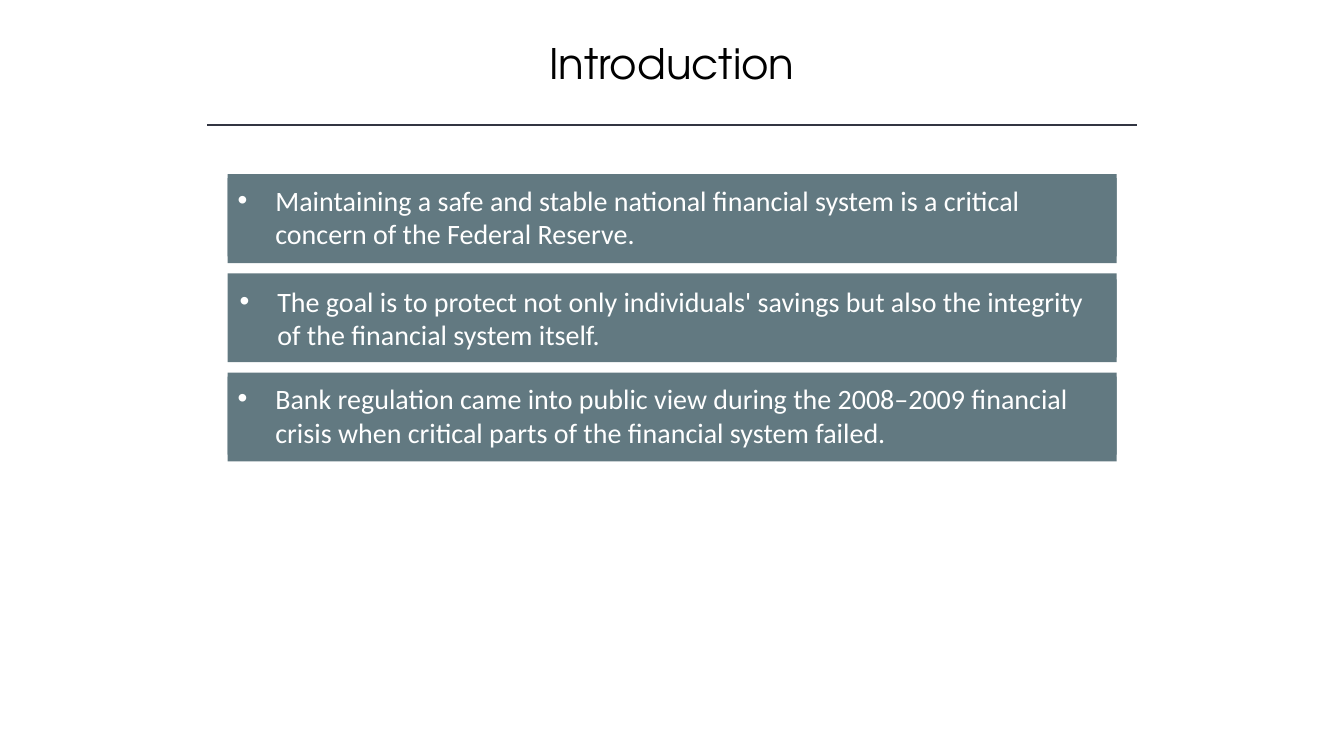
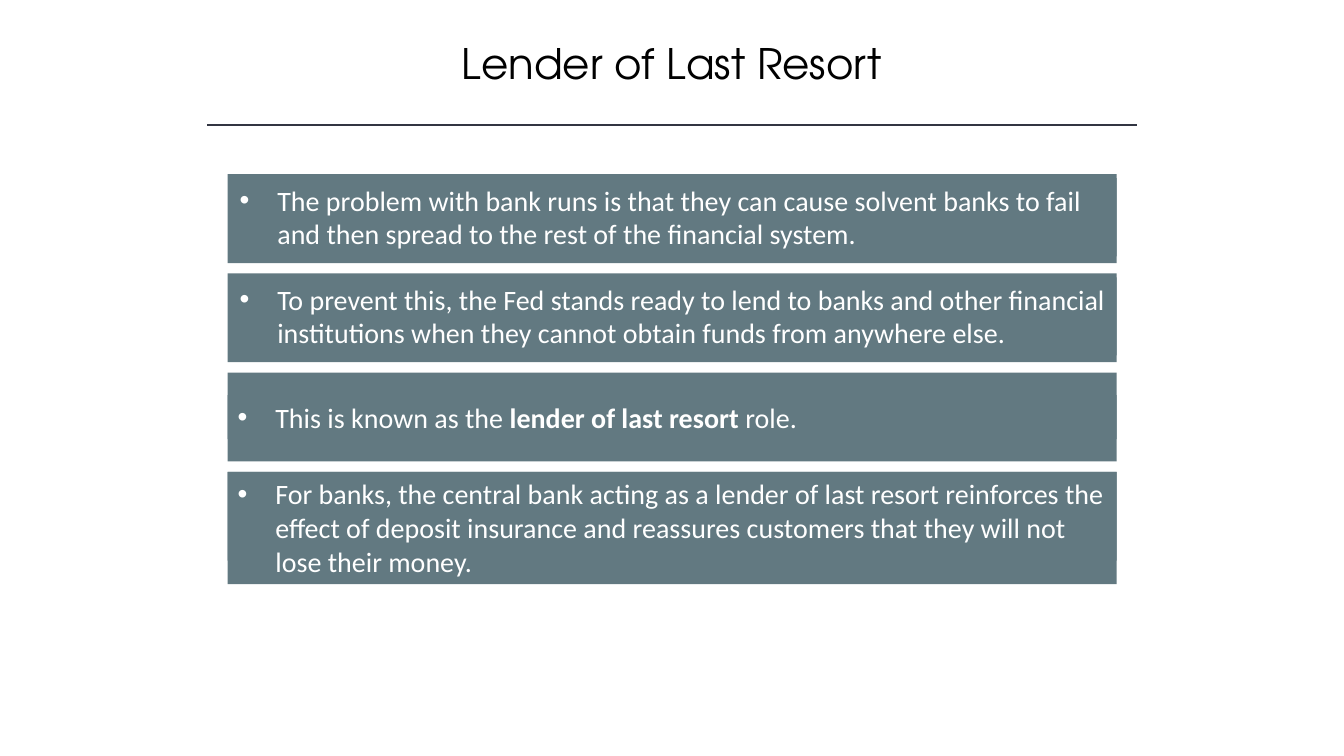
"""Build two slides on bank regulation with titled stacks of bullet cards."""
from dataclasses import dataclass

from lxml import etree
from pptx import Presentation
from pptx.dml.color import RGBColor
from pptx.enum.shapes import MSO_CONNECTOR, MSO_SHAPE
from pptx.enum.text import MSO_ANCHOR, MSO_AUTO_SIZE, PP_ALIGN
from pptx.oxml.ns import qn
from pptx.util import Cm, Pt

RECTANGLE = MSO_SHAPE.RECTANGLE
STRAIGHT = MSO_CONNECTOR.STRAIGHT
TOP = MSO_ANCHOR.TOP
FIT_SHAPE = MSO_AUTO_SIZE.SHAPE_TO_FIT_TEXT
CENTER, LEFT = PP_ALIGN.CENTER, PP_ALIGN.LEFT

COLORS = {"title": "000000", "rule": "323542", "card": "627981", "text": "FFFFFF"}
TITLE_FONT, BODY_FONT = "TeX Gyre Adventor", "Calibri"
TITLE_SIZE, BODY_SIZE = 30, 20

SLIDE_WIDTH, SLIDE_HEIGHT = 33.87, 19.05
TITLE_TOP, TITLE_WIDTH, TITLE_HEIGHT = 0.81, 25.4, 1.55
RULE_TOP, RULE_WIDTH = 3.15, 23.42
CARD_LEFT, CARD_TOP, CARD_WIDTH, CARD_HEIGHT = 5.74, 4.39, 22.4, 2.24
CARD_PITCH = 2.5
TEXT_PADDING, LINE_HEIGHT = 0.25, 0.86
BULLET_INDENT = 0.95


@dataclass(frozen=True)
class Card:
    """A bullet as text pieces, the odd ones bold, with its offset in the card."""

    pieces: tuple[str, ...]
    lines: int = 2
    shift_x: float = 0
    shift_y: float = 0.1


@dataclass(frozen=True)
class Page:
    """A slide title and its cards."""

    title: str
    cards: tuple[Card, ...]


PAGES = (
    Page("Introduction", (
        Card(("Maintaining a safe and stable national financial system is a critical "
              "concern of the Federal Reserve.",)),
        Card(("The goal is to protect not only individuals' savings but also the "
              "integrity of the financial system itself.",), shift_x=0.05, shift_y=0.15),
        Card(("Bank regulation came into public view during the 2008–2009 financial "
              "crisis when critical parts of the financial system failed.",)),
    )),
    Page("Lender of Last Resort", (
        Card(("The problem with bank runs is that they can cause solvent banks to fail "
              "and then spread to the rest of the financial system.",), shift_x=0.05),
        Card(("To prevent this, the Fed stands ready to lend to banks and other financial "
              "institutions when they cannot obtain funds from anywhere else.",),
             shift_x=0.05),
        Card(("This is known as the ", "lender of last resort ", "role."),
             lines=1, shift_y=0.57),
        Card(("For banks, the central bank acting as a lender of last resort reinforces "
              "the effect of deposit insurance and reassures customers that they will "
              "not lose their money.",), lines=3, shift_y=0),
    )),
)


def color(name: str) -> RGBColor:
    """Return a palette colour."""
    return RGBColor.from_string(COLORS[name])


def style_font(font, name: str, size: int, color_name: str) -> None:
    """Set the face, size and colour of a font."""
    font.name = name
    font.size = Pt(size)
    font.color.rgb = color(color_name)


def add_title(slide, text: str) -> None:
    """Add the centred title and the rule under it."""
    left = (SLIDE_WIDTH - TITLE_WIDTH) / 2
    box = slide.shapes.add_textbox(Cm(left), Cm(TITLE_TOP), Cm(TITLE_WIDTH), Cm(TITLE_HEIGHT))
    frame = box.text_frame
    frame.text = text
    frame.word_wrap = True
    frame.auto_size = FIT_SHAPE
    paragraph = frame.paragraphs[0]
    paragraph.alignment = CENTER
    style_font(paragraph.runs[0].font, TITLE_FONT, TITLE_SIZE, "title")

    start = (SLIDE_WIDTH - RULE_WIDTH) / 2
    rule = slide.shapes.add_connector(
        STRAIGHT, Cm(start), Cm(RULE_TOP), Cm(start + RULE_WIDTH), Cm(RULE_TOP))
    rule.line.color.rgb = color("rule")
    rule.line.width = Pt(1)
    etree.SubElement(rule.element.spPr, qn("a:effectLst"))


def add_panel(group, left: float, top: float, width: float, height: float):
    """Add a plain filled rectangle to a group."""
    shape = group.shapes.add_shape(RECTANGLE, Cm(left), Cm(top), Cm(width), Cm(height))
    shape.shadow.inherit = False
    shape.fill.solid()
    shape.fill.fore_color.rgb = color("card")
    shape.line.fill.background()
    return shape


def set_bullet(paragraph) -> None:
    """Give a paragraph a hanging round bullet."""
    properties = paragraph._p.get_or_add_pPr()
    properties.set("marL", str(Cm(BULLET_INDENT)))
    properties.set("indent", str(-Cm(BULLET_INDENT)))
    etree.SubElement(properties, qn("a:buFont"), typeface="Arial")
    etree.SubElement(properties, qn("a:buChar"), char="•")


def add_card(slide, card: Card, top: float) -> None:
    """Add a panel grouped with its bullet text."""
    group = slide.shapes.add_group_shape()
    add_panel(group, CARD_LEFT, top, CARD_WIDTH, CARD_HEIGHT)
    label = add_panel(
        group, CARD_LEFT + card.shift_x, top + card.shift_y,
        CARD_WIDTH - card.shift_x, TEXT_PADDING + card.lines * LINE_HEIGHT)
    frame = label.text_frame
    frame.word_wrap = True
    frame.auto_size = FIT_SHAPE
    frame.vertical_anchor = TOP
    paragraph = frame.paragraphs[0]
    paragraph.alignment = LEFT
    set_bullet(paragraph)
    for index, piece in enumerate(card.pieces):
        run = paragraph.add_run()
        run.text = piece
        run.font.bold = index % 2 == 1
        style_font(run.font, BODY_FONT, BODY_SIZE, "text")


def main() -> None:
    """Build and save the presentation."""
    presentation = Presentation()
    presentation.slide_width = Cm(SLIDE_WIDTH)
    presentation.slide_height = Cm(SLIDE_HEIGHT)
    blank_layout = presentation.slide_layouts[6]
    for page in PAGES:
        slide = presentation.slides.add_slide(blank_layout)
        add_title(slide, page.title)
        for index, card in enumerate(page.cards):
            add_card(slide, card, CARD_TOP + index * CARD_PITCH)
    presentation.save("out.pptx")


if __name__ == "__main__":
    main()
